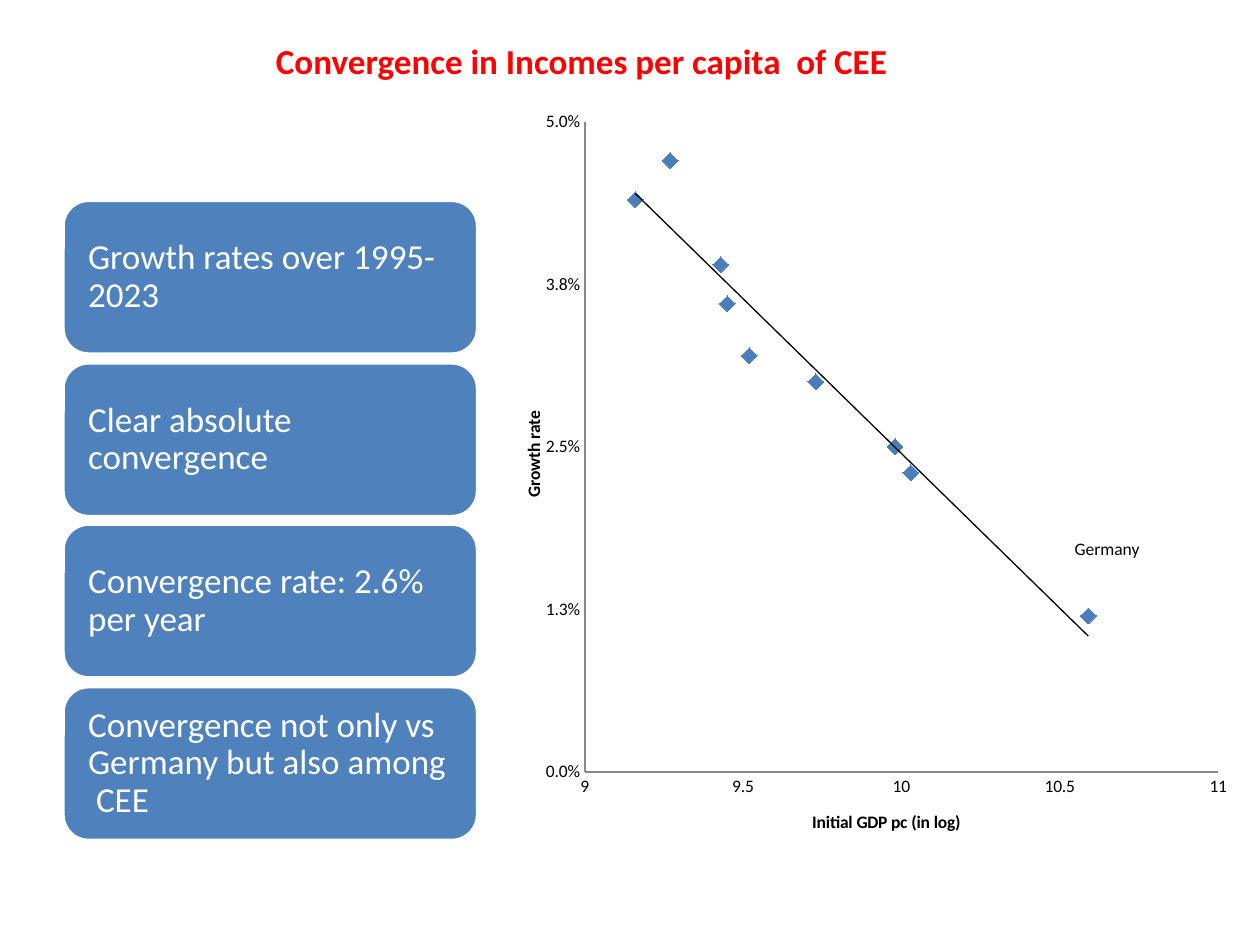
from lxml import etree
from pptx import Presentation
from pptx import util as u
from pptx.chart.data import XyChartData
from pptx.dml.color import RGBColor
from pptx.enum import chart as charts, shapes, text
from pptx.oxml import parse_xml
from pptx.oxml.ns import nsdecls, qn

PX = 9144  # 100 px to the inch
FONT = "Calibri"
COLOURS = {"title": "FF0000", "card": "4F81BD", "white": "FFFFFF",
           "ink": "000000", "axis": "888888", "marker": "4A7EBB"}
CARDS = ["Growth rates over 1995-2023",
         "Clear absolute convergence",
         "Convergence rate: 2.6% per year",
         "Convergence not only vs Germany but also among  CEE"]
POINTS = [(10.03, 0.023), (9.45, 0.036), (9.73, 0.03), (9.16, 0.044), (9.27, 0.047),
          (9.43, 0.039), (9.52, 0.032), (9.98, 0.025), (10.59, 0.012)]


def px(*lengths):
    return [u.Emu(length * PX) for length in lengths]


def colour(name):
    return RGBColor.from_string(COLOURS[name])


def style_font(font, size, name, bold=False):
    font.name, font.size, font.bold = FONT, u.Pt(size), bold
    font.color.rgb = colour(name)


def write(frame, words, size, name, inset, anchor, bold=False):
    frame.vertical_anchor = anchor
    frame.margin_left, frame.margin_right, frame.margin_top, frame.margin_bottom = px(*[inset] * 4)
    para = frame.paragraphs[0]
    para.alignment = text.PP_ALIGN.LEFT
    span = para.add_run()
    span.text = words
    style_font(span.font, size, name, bold)
    return para


def add_title(page, box):
    title = page.shapes.title
    title.left, title.top, title.width, title.height = px(*box)
    title.text_frame.word_wrap = True
    write(title.text_frame, "Convergence in Incomes per capita  of CEE",
          20, "title", 5, text.MSO_ANCHOR.BOTTOM, bold=True)


def add_cards(page, box):
    left, top, width, height = box
    card_height = 122
    step = (height - card_height) / (len(CARDS) - 1)
    for index, words in enumerate(CARDS):
        place = px(left, round(top + index * step), width, card_height)
        card = page.shapes.add_shape(shapes.MSO_SHAPE.ROUNDED_RECTANGLE, *place)
        card.shadow.inherit = False
        card.fill.solid()
        card.fill.fore_color.rgb = colour("card")
        card.line.color.rgb = colour("white")
        card.line.width = u.Pt(2)
        card.text_frame.word_wrap = True
        para = write(card.text_frame, words, 20, "white", 14, text.MSO_ANCHOR.MIDDLE)
        para.line_spacing = 0.9


def style_axis(axis, title, low, high, major, number_format):
    axis.minimum_scale, axis.maximum_scale, axis.major_unit = low, high, major
    axis.has_major_gridlines = False
    axis.major_tick_mark = axis.minor_tick_mark = charts.XL_TICK_MARK.NONE
    axis.format.line.color.rgb = colour("axis")
    axis.format.line.width = u.Pt(1)
    labels = axis.tick_labels
    labels.number_format, labels.number_format_is_linked = number_format, False
    style_font(labels.font, 10, "ink")
    span = axis.axis_title.text_frame.paragraphs[0].add_run()
    span.text = title
    style_font(span.font, 10, "ink", bold=True)


def add_trend_line(series):
    trend = parse_xml(
        f'<c:trendline {nsdecls("c", "a")}><c:spPr><a:ln w="9525"><a:solidFill>'
        f'<a:srgbClr val="{COLOURS["ink"]}"/></a:solidFill></a:ln></c:spPr>'
        '<c:trendlineType val="linear"/><c:dispRSqr val="0"/><c:dispEq val="0"/>'
        '</c:trendline>')
    series._element.find(qn("c:xVal")).addprevious(trend)


def set_plot_area(chart, x, y, w, h):
    plot_area = chart._chartSpace.chart.plotArea
    for old in plot_area.findall(qn("c:layout")):
        plot_area.remove(old)
    layout = parse_xml(f'<c:layout {nsdecls("c")}><c:manualLayout/></c:layout>')
    settings = {"layoutTarget": "inner", "xMode": "edge", "yMode": "edge",
                "x": x, "y": y, "w": w, "h": h}
    for tag, value in settings.items():
        etree.SubElement(layout[0], qn(f"c:{tag}")).set("val", str(value))
    plot_area.insert(0, layout)


def add_scatter(page, box):
    left, top, width, height = box
    data = XyChartData()
    growth = data.add_series("Series 1")
    for point in POINTS:
        growth.add_data_point(*point)
    chart = page.shapes.add_chart(charts.XL_CHART_TYPE.XY_SCATTER, *px(*box), data).chart
    chart.has_legend = chart.has_title = False
    style_font(chart.font, 10, "ink")
    chart.plots[0].vary_by_categories = False
    style_axis(chart.category_axis, "Initial GDP pc (in log)", 9, 11, 0.5, "0.####")
    style_axis(chart.value_axis, "Growth rate", 0, 0.05, 0.0125, "0.0%")
    set_plot_area(chart, 0.09, 0.02, 0.87, 0.89)

    # Diamonds without a joining line
    series = chart.plots[0].series[0]
    series.smooth = False
    series.format.line.fill.background()
    marker = series.marker
    marker.style, marker.size = charts.XL_MARKER_STYLE.DIAMOND, 9
    marker.format.fill.solid()
    marker.format.fill.fore_color.rgb = colour("marker")
    marker.format.line.color.rgb = colour("marker")
    add_trend_line(series)

    # Country label above the last point
    label = page.shapes.add_textbox(*px(left + 436, top + 337, 63, 25))
    label.text_frame.word_wrap = False
    write(label.text_frame, "Germany", 10, "ink", 5, text.MSO_ANCHOR.TOP)


def main():
    deck = Presentation()
    deck.slide_width, deck.slide_height = px(1000, 750)
    page = deck.slides.add_slide(deck.slide_layouts[5])
    add_title(page, (214, 16, 502, 54))
    add_scatter(page, (412, 85, 578, 580))
    add_cards(page, (50, 159, 329, 508))
    deck.save("out.pptx")


if __name__ == "__main__":
    main()
